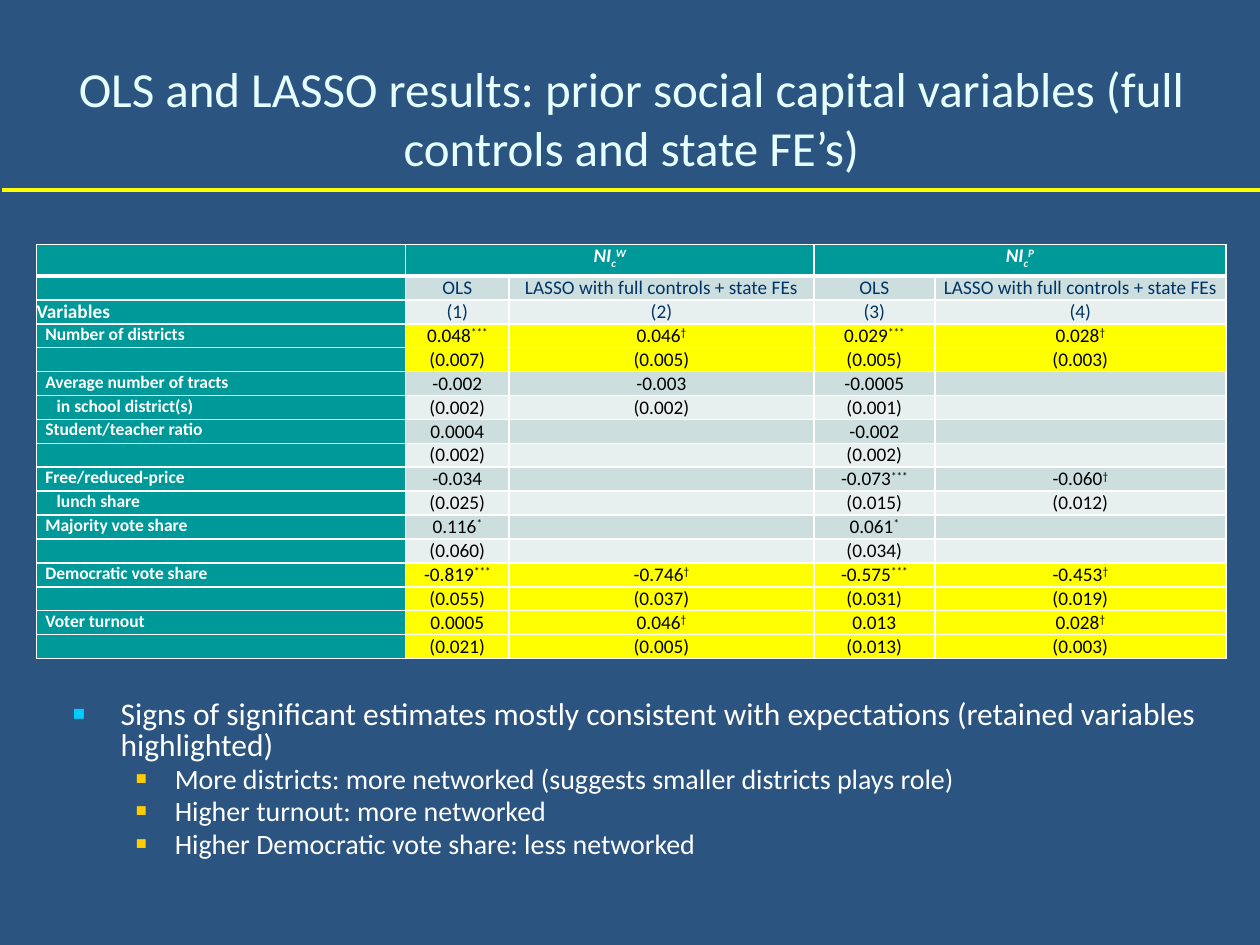
from lxml import etree
from pptx import Presentation
from pptx.dml.color import RGBColor
from pptx.enum.shapes import MSO_CONNECTOR
from pptx.enum.text import MSO_ANCHOR, PP_ALIGN
from pptx.oxml.ns import qn
from pptx.util import Inches, Pt

LEFT, CENTER = PP_ALIGN.LEFT, PP_ALIGN.CENTER
TOP, MIDDLE, BOTTOM = MSO_ANCHOR.TOP, MSO_ANCHOR.MIDDLE, MSO_ANCHOR.BOTTOM
STRAIGHT = MSO_CONNECTOR.STRAIGHT

LASSO = "LASSO with full controls + state FEs"
HEADINGS = [["", "OLS", LASSO, "OLS", LASSO], ["Variables", "(1)", "(2)", "(3)", "(4)"]]
ESTIMATES = [
    ["Number of districts", "0.048***", "0.046†", "0.029***", "0.028†"],
    ["", "(0.007)", "(0.005)", "(0.005)", "(0.003)"],
    ["Average number of tracts", "-0.002", "-0.003", "-0.0005", ""],
    ["in school district(s)", "(0.002)", "(0.002)", "(0.001)", ""],
    ["Student/teacher ratio", "0.0004", "", "-0.002", ""],
    ["", "(0.002)", "", "(0.002)", ""],
    ["Free/reduced-price", "-0.034", "", "-0.073***", "-0.060†"],
    ["lunch share", "(0.025)", "", "(0.015)", "(0.012)"],
    ["Majority vote share", "0.116*", "", "0.061*", ""],
    ["", "(0.060)", "", "(0.034)", ""],
    ["Democratic vote share", "-0.819***", "-0.746†", "-0.575***", "-0.453†"],
    ["", "(0.055)", "(0.037)", "(0.031)", "(0.019)"],
    ["Voter turnout", "0.0005", "0.046†", "0.013", "0.028†"],
    ["", "(0.021)", "(0.005)", "(0.013)", "(0.003)"],
]
HIGHLIGHTED = {"Number of districts", "Democratic vote share", "Voter turnout"}
CONTINUED = {"in school district(s)", "lunch share"}
COLUMN_WIDTHS = [2.93, 0.82, 2.42, 0.96, 2.31]
HEADER_HEIGHT, ROW_HEIGHT = 0.25, 0.19
POINTS = [
    (0, "Signs of significant estimates mostly consistent with expectations "
        "(retained variables highlighted)"),
    (1, "More districts: more networked (suggests smaller districts plays role)"),
    (1, "Higher turnout: more networked"),
    (1, "Higher Democratic vote share: less networked"),
]
LEVELS = [(18, 0.38, 0.38, "00CCFF"), (16, 0.81, 0.31, "FFCC00")]


def color(value):
    """Turn a hex string into a colour."""
    return RGBColor.from_string(value)


class ResultsSlide:
    """Hold the style and the slide being built."""

    font = "Calibri"
    teal, white, navy, black = "009999", "FFFFFF", "003366", "000000"
    yellow = "FFFF00"
    bands = ["E7EFEF", "CCDEDE"]

    def __init__(self, deck):
        """Add a blank slide with the deck's background."""
        self.slide = deck.slides.add_slide(deck.slide_layouts[6])
        background = self.slide.background.fill
        background.solid()
        background.fore_color.rgb = color("2B5481")

    def style(self, span, size, ink, bold=False, italic=False, baseline=0):
        """Format one run."""
        span.font.name = self.font
        span.font.size = Pt(size)
        span.font.bold, span.font.italic = bold, italic
        span.font.color.rgb = color(ink)
        if baseline:
            span.font._element.set("baseline", str(baseline * 1000))

    def text_box(self, left, top, width, height):
        """Add a wrapping text box and return its frame."""
        box = self.slide.shapes.add_textbox(
            Inches(left), Inches(top), Inches(width), Inches(height))
        box.text_frame.word_wrap = True
        return box.text_frame

    def title(self, text):
        """Add the centred title."""
        frame = self.text_box(0.52, 0.18, 8.98, 1.5)
        frame.margin_left = frame.margin_right = 0
        frame.vertical_anchor = MIDDLE
        frame.text = text
        para = frame.paragraphs[0]
        para.alignment = CENTER
        self.style(para.runs[0], 28, "E5FFFF")

    def rule(self, left, right, top):
        """Add the horizontal line under the title."""
        line = self.slide.shapes.add_connector(
            STRAIGHT, Inches(left), Inches(top), Inches(right), Inches(top))
        line.line.color.rgb = color(self.yellow)
        line.line.width = Pt(2)
        etree.SubElement(line._element.spPr, qn("a:effectLst"))

    def bullets(self, points):
        """Add the two-level list."""
        frame = self.text_box(0.48, 5.52, 9.47, 0.56)
        frame.text = "\n".join(text for _, text in points)
        for para, (level, _) in zip(frame.paragraphs, points):
            size, margin, hanging, bullet = LEVELS[level]
            para.level = level
            para.line_spacing = 0.8
            para.space_before = Pt(size * 0.2)
            self.style(para.runs[0], size, self.white)
            properties = para._p.get_or_add_pPr()
            properties.set("marL", str(Inches(margin)))
            properties.set("indent", str(-Inches(hanging)))
            tint = etree.SubElement(properties, qn("a:buClr"))
            etree.SubElement(tint, qn("a:srgbClr"), val=bullet)
            etree.SubElement(properties, qn("a:buSzPct"), val="65000")
            etree.SubElement(properties, qn("a:buFont"), typeface="Arial")
            etree.SubElement(properties, qn("a:buChar"), char="■")

    def cell(self, cell, fill, pieces=(), size=11, ink="FFFFFF", bold=False,
             italic=False, align=CENTER, anchor=TOP, inset=0.0, bottom=1):
        """Fill one cell with (text, baseline) pieces and draw its borders."""
        cell.margin_left = cell.margin_right = Inches(inset)
        cell.margin_top = cell.margin_bottom = 0
        cell.vertical_anchor = anchor
        properties = cell._tc.get_or_add_tcPr()
        for side in "LRTB":
            width = Pt(bottom if side == "B" else 1)
            border = etree.SubElement(properties, qn("a:ln" + side), w=str(width))
            paint = etree.SubElement(border, qn("a:solidFill"))
            etree.SubElement(paint, qn("a:srgbClr"), val=self.white)
        cell.fill.solid()
        cell.fill.fore_color.rgb = color(fill)
        para = cell.text_frame.paragraphs[0]
        para.alignment = align
        for text, baseline in pieces:
            span = para.add_run()
            span.text = text
            self.style(span, size, ink, bold, italic, baseline)
        if not pieces:
            etree.SubElement(para._p, qn("a:endParaRPr"), sz="1000")

    def estimate(self, cell, fill, value):
        """Fill a cell with a number and its raised significance mark."""
        number = value.rstrip("*†")
        pieces = [(number, 0), (value[len(number):], 30)]
        self.cell(cell, fill, [piece for piece in pieces if piece[0]],
                  ink=self.black, anchor=BOTTOM, inset=0.07)

    def table(self):
        """Add the table of estimates."""
        rows = HEADINGS + ESTIMATES
        height = HEADER_HEIGHT + ROW_HEIGHT * len(rows)
        table = self.slide.shapes.add_table(
            len(rows) + 1, len(COLUMN_WIDTHS), Inches(0.29), Inches(1.94),
            Inches(sum(COLUMN_WIDTHS)), Inches(height)).table
        table.first_row = table.horz_banding = False
        for column, width in zip(table.columns, COLUMN_WIDTHS):
            column.width = Inches(width)
        for row in table.rows:
            row.height = Inches(ROW_HEIGHT)
        table.rows[0].height = Inches(HEADER_HEIGHT)

        groups = {1: "W", 3: "P"}
        for column in range(len(COLUMN_WIDTHS)):
            pieces = []
            if column in groups:
                pieces = [("NI", 0), ("c", -25), (groups[column], 30)]
                table.cell(0, column).merge(table.cell(0, column + 1))
            self.cell(table.cell(0, column), self.teal, pieces,
                      bold=True, italic=True, bottom=3)

        highlighted = False
        for index, (label, *values) in enumerate(rows, 1):
            heading = index <= len(HEADINGS)
            if label:
                highlighted = label in HIGHLIGHTED
            inset = 0 if heading else 0.07
            self.cell(table.cell(index, 0), self.teal, [(label, 0)] if label else [],
                      size=11 if heading else 10, bold=True, align=LEFT, inset=inset)
            if label in CONTINUED:
                table.cell(index, 0).margin_left = Inches(0.16)
            fill = self.yellow if highlighted else self.bands[index % 2]
            for column, value in enumerate(values, 1):
                target = table.cell(index, column)
                if heading:
                    self.cell(target, fill, [(value, 0)], ink=self.navy)
                else:
                    self.estimate(target, fill, value)


def main():
    """Build and save the deck."""
    deck = Presentation()
    deck.slide_width, deck.slide_height = Inches(10), Inches(7.5)
    page = ResultsSlide(deck)
    page.title("OLS and LASSO results: prior social capital variables "
               "(full controls and state FE’s)")
    page.rule(0.02, 10, 1.51)
    page.bullets(POINTS)
    page.table()
    deck.save("out.pptx")


if __name__ == "__main__":
    main()
